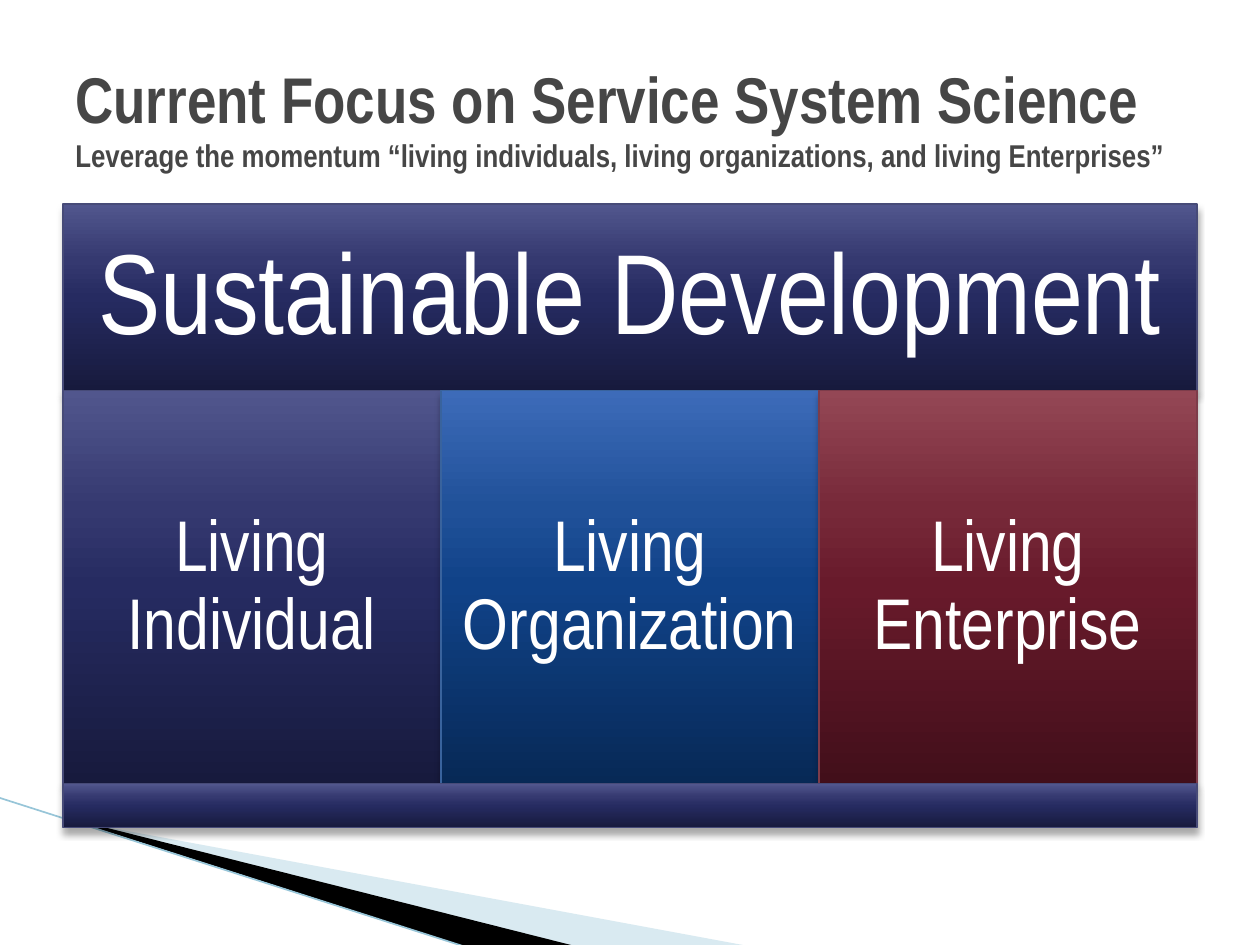
from lxml import etree
from pptx import Presentation
from pptx.dml.color import RGBColor
from pptx.enum import shapes, text
from pptx.oxml import ns
from pptx.util import Inches, Pt

FONT = "Arial Narrow"
WHITE = RGBColor(0xFF, 0xFF, 0xFF)
BLACK = RGBColor(0, 0, 0)
GREY = RGBColor(0x46, 0x46, 0x46)
PALE = RGBColor(0xA0, 0xCB, 0xDC)
TEAL = RGBColor(0x97, 0xC5, 0xD8)
# Each palette: four gradient colours from bottom to top, then the outline
NAVY = [RGBColor.from_string(c) for c in ("171A3D", "262B61", "353970", "51568D", "474B78")]
BLUE = [RGBColor.from_string(c) for c in ("072956", "104288", "205199", "3D6BB9", "39639D")]
RED = [RGBColor.from_string(c) for c in ("420F1A", "681A2B", "772939", "944755", "7D3C4A")]
STOPS = (0, 50, 70, 100)


def add_xml(parent, tag, **attrs):
    return etree.SubElement(parent, ns.qn(tag), {k: str(v) for k, v in attrs.items()})


def add_color(parent, color, alpha):
    clr = add_xml(parent, "a:srgbClr", val=color)
    add_xml(clr, "a:alpha", val=alpha * 1000)


def fill_gradient(sp, colors):
    sp.fill.gradient()
    sp.fill.gradient_angle = 90
    stops = sp._element.spPr.find(".//" + ns.qn("a:gsLst"))
    for old in list(stops):
        stops.remove(old)
    for pos, color in zip(STOPS, colors):
        add_color(add_xml(stops, "a:gs", pos=pos * 1000), color, 100)


def add_shadow(sp):
    sp.shadow.inherit = False
    effects = sp._element.spPr.find(ns.qn("a:effectLst"))
    shadow = add_xml(effects, "a:outerShdw", blurRad=Pt(4), dist=Pt(3),
                     dir=90 * 60000, rotWithShape=0)
    add_color(shadow, BLACK, 35)


def add_block(s, x, y, w, h, palette, label="", size=41, inset=0.17):
    sp = s.shapes.add_shape(shapes.MSO_SHAPE.RECTANGLE,
                            Inches(x), Inches(y), Inches(w), Inches(h))
    fill_gradient(sp, palette[:4])
    sp.line.color.rgb = palette[4]
    sp.line.width = Pt(0.75)
    add_shadow(sp)
    if not label:
        return
    tf = sp.text_frame
    tf.word_wrap = True
    tf.vertical_anchor = text.MSO_ANCHOR.MIDDLE
    tf.margin_left = tf.margin_right = tf.margin_top = tf.margin_bottom = Inches(inset)
    tf.text = label
    p = tf.paragraphs[0]
    p.alignment = text.PP_ALIGN.CENTER
    p.line_spacing = 0.9
    p.font.name, p.font.size = FONT, Pt(size)
    p.font.color.rgb = WHITE


def add_focus_table(s, x, y, w):
    """Stack a headline block, three columns and a base bar."""
    head_h, column_h, base_h = 1.48, 3.12, 0.35
    columns = [("Living Individual", NAVY), ("Living Organization", BLUE),
               ("Living Enterprise", RED)]
    column_w = w / len(columns)
    add_block(s, x, y, w, head_h, NAVY, "Sustainable Development", 65, 0.27)
    for i, (label, palette) in enumerate(columns):
        add_block(s, x + i * column_w, y + head_h, column_w, column_h, palette, label)
    add_block(s, x, y + head_h + column_h, w, base_h, NAVY)


def add_wedge(s, x, y, offsets, color, alpha=100):
    points = [(Inches(x + dx), Inches(y + dy)) for dx, dy in offsets]
    fb = s.shapes.build_freeform(*points[0], scale=1.0)
    fb.add_line_segments(points[1:], close=True)
    sp = fb.convert_to_shape()
    sp.fill.solid()
    sp.fill.fore_color.rgb = color
    add_xml(sp._element.spPr.find(".//" + ns.qn("a:srgbClr")), "a:alpha", val=alpha * 1000)
    sp.line.fill.background()
    sp.shadow.inherit = False


def add_corner_swoosh(s, x, y):
    add_wedge(s, x + 0.56, y + 0.17, [(0, 0.01), (5.4, 1.01), (4.01, 1.01), (0, 0)], PALE, 40)
    add_wedge(s, x + 0.54, y + 0.16, [(0, 0), (4.04, 1.02), (3.19, 1.03), (0.01, 0.01)], BLACK)
    line = s.shapes.add_connector(shapes.MSO_CONNECTOR.STRAIGHT, Inches(x), Inches(y),
                                  Inches(x + 3.72), Inches(y + 1.19))
    line.line.color.rgb = TEAL
    line.line.width = Pt(0.95)
    add_xml(line._element.spPr, "a:effectLst")


def add_title(s, x, y, w, h):
    tf = s.shapes.add_textbox(Inches(x), Inches(y), Inches(w), Inches(h)).text_frame
    tf.word_wrap = True
    tf.vertical_anchor = text.MSO_ANCHOR.MIDDLE
    p = tf.paragraphs[0]
    p.text = ("Current Focus on Service System Science\v"
              "Leverage the momentum “living individuals, living organizations, "
              "and living Enterprises”")
    for r, size in zip(p.runs, (36.9, 18)):
        r.font.name, r.font.size, r.font.bold = FONT, Pt(size), True
        r.font.color.rgb = GREY


def main():
    prs = Presentation()
    prs.slide_width, prs.slide_height = Inches(10), Inches(7.5)
    s = prs.slides.add_slide(prs.slide_layouts[6])
    add_corner_swoosh(s, -0.01, 6.33)
    add_focus_table(s, 0.5, 1.62, 9)
    add_title(s, 0.5, 0.3, 9, 1.25)
    prs.save("out.pptx")


if __name__ == "__main__":
    main()
